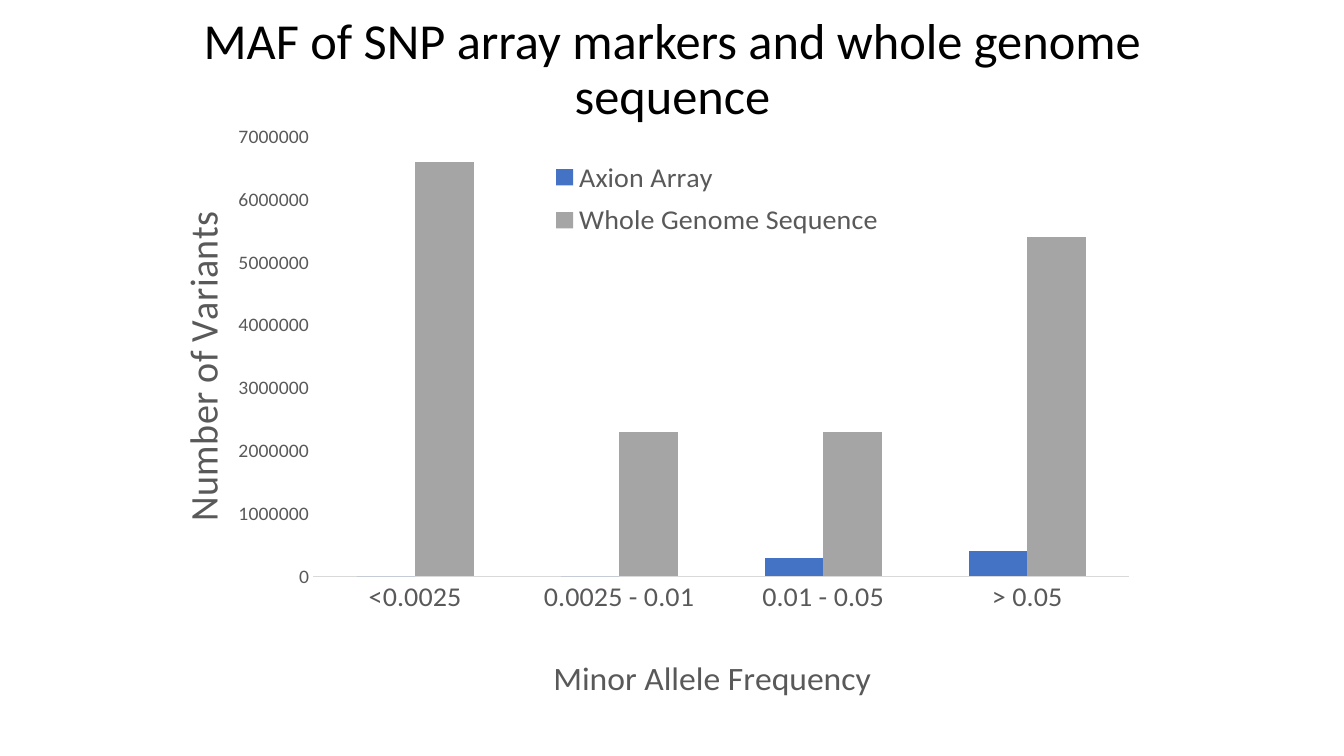
import pptx
import pptx.chart.data
import pptx.dml.color
import pptx.enum.chart
import pptx.enum.text
import pptx.oxml
import pptx.oxml.ns
import pptx.util
from pptx.util import Inches

FONT = "Calibri"
BLACK = pptx.dml.color.RGBColor(0x00, 0x00, 0x00)
DARK_GREY = pptx.dml.color.RGBColor(0x59, 0x59, 0x59)
LINE_GREY = pptx.dml.color.RGBColor(0xD9, 0xD9, 0xD9)
BLUE = pptx.dml.color.RGBColor(0x44, 0x72, 0xC4)
GREY = pptx.dml.color.RGBColor(0xA5, 0xA5, 0xA5)

CATEGORIES = ["<0.0025", "0.0025 - 0.01", "0.01 - 0.05", "> 0.05"]
SERIES = [
    ("Axion Array", [0, 0, 300000, 400000], BLUE),
    ("Whole Genome Sequence", [6600000, 2300000, 2300000, 5400000], GREY),
]


def set_font(font, size, color):
    font.name = FONT
    font.size = pptx.util.Pt(size)
    font.bold = False
    font.color.rgb = color


def place(element, index, x, y, width=None, height=None):
    """Lay out a chart part by fractions of the chart; index is its layout's child position."""
    for old in element.findall(pptx.oxml.ns.qn("c:layout")):
        element.remove(old)
    target = '<c:layoutTarget val="inner"/>' if index == 0 else ""
    sizes = [(name, value) for name, value in
             (("x", x), ("y", y), ("w", width), ("h", height)) if value is not None]
    modes = "".join(f'<c:{name}Mode val="edge"/>' for name, value in sizes if name in "xy")
    values = "".join(f'<c:{name} val="{value}"/>' for name, value in sizes)
    element.insert(index, pptx.oxml.parse_xml(
        f'<c:layout {pptx.oxml.ns.nsdecls("c")}><c:manualLayout>'
        f"{target}{modes}{values}</c:manualLayout></c:layout>"))


def add_title(slide, text):
    box = slide.shapes.add_textbox(Inches(0.92), Inches(0.13), Inches(11.5), Inches(1.14))
    frame = box.text_frame
    frame.word_wrap = True
    frame.vertical_anchor = pptx.enum.text.MSO_ANCHOR.MIDDLE
    para = frame.paragraphs[0]
    para.text = text
    para.alignment = pptx.enum.text.PP_ALIGN.CENTER
    para.line_spacing = 0.9
    set_font(para.font, 36, BLACK)


def style_axis(axis, title, title_size, tick_size, x, y):
    axis.has_major_gridlines = False
    axis.major_tick_mark = pptx.enum.chart.XL_TICK_MARK.NONE
    axis.minor_tick_mark = pptx.enum.chart.XL_TICK_MARK.NONE
    set_font(axis.tick_labels.font, tick_size, DARK_GREY)
    frame = axis.axis_title.text_frame
    frame.text = title
    set_font(frame.paragraphs[0].font, title_size, DARK_GREY)
    place(axis.axis_title.element, 1, x, y)


def add_variant_chart(slide):
    data = pptx.chart.data.CategoryChartData(number_format="General")
    data.categories = CATEGORIES
    for name, values, _ in SERIES:
        data.add_series(name, values)
    chart = slide.shapes.add_chart(
        pptx.enum.chart.XL_CHART_TYPE.COLUMN_CLUSTERED,
        Inches(1.48), Inches(1.14), Inches(9.92), Inches(5.9), data).chart
    chart.has_title = False
    set_font(chart.font, 10, BLACK)

    plot = chart.plots[0]
    plot.gap_width = 150
    plot.overlap = 0
    plot.vary_by_categories = False
    for series, (_, _, color) in zip(plot.series, SERIES):
        series.format.fill.solid()
        series.format.fill.fore_color.rgb = color
    place(chart.element.xpath(".//c:plotArea")[0], 0, 0.164, 0.038, 0.816, 0.762)

    category_axis = chart.category_axis
    style_axis(category_axis, "Minor Allele Frequency", 24, 20, 0.398, 0.928)
    category_axis.format.line.color.rgb = LINE_GREY
    category_axis.format.line.width = pptx.util.Pt(0.75)

    value_axis = chart.value_axis
    style_axis(value_axis, "Number of Variants", 28, 14, 0.02, 0.172)
    value_axis.minimum_scale = 0
    value_axis.maximum_scale = 7000000
    value_axis.major_unit = 1000000
    value_axis.format.line.fill.background()
    value_axis.axis_title.element.xpath(".//a:bodyPr")[0].set("rot", "-5400000")

    chart.has_legend = True
    chart.legend.position = pptx.enum.chart.XL_LEGEND_POSITION.BOTTOM
    chart.legend.include_in_layout = False
    set_font(chart.legend.font, 20, DARK_GREY)
    place(chart.element.xpath(".//c:legend")[0], 1, 0.393, 0.063, 0.35, 0.165)


def main():
    deck = pptx.Presentation()
    deck.slide_width = Inches(13.33)
    deck.slide_height = Inches(7.5)
    slide = deck.slides.add_slide(deck.slide_layouts[6])
    add_title(slide, "MAF of SNP array markers and whole genome sequence")
    add_variant_chart(slide)
    deck.save("out.pptx")


if __name__ == "__main__":
    main()
